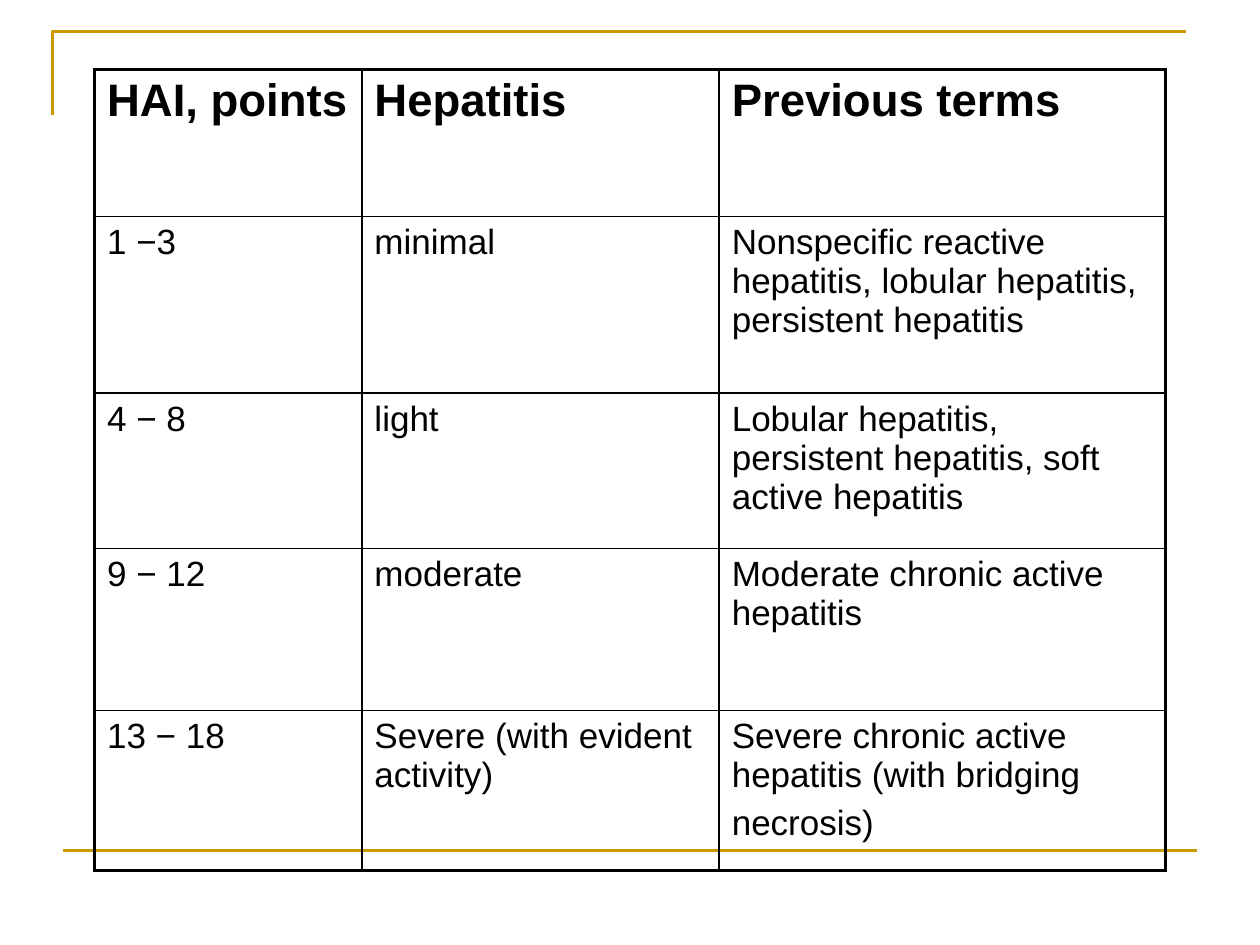
from lxml import etree
from pptx import Presentation
from pptx.dml.color import RGBColor
from pptx.enum.shapes import MSO_CONNECTOR
from pptx.oxml.ns import qn
from pptx.util import Pt

STRAIGHT = MSO_CONNECTOR.STRAIGHT
GOLD, BLACK = "CC9900", "000000"
THIN, THICK = 1, 2.25

ROWS = [
    ("HAI, points", "Hepatitis", "Previous terms"),
    ("1 −3", "minimal",
     "Nonspecific reactive hepatitis, lobular hepatitis, persistent hepatitis"),
    ("4 − 8", "light",
     "Lobular hepatitis, persistent hepatitis, soft active hepatitis"),
    ("9 − 12", "moderate", "Moderate chronic active hepatitis"),
    ("13 − 18", "Severe (with evident activity)",
     "Severe chronic active hepatitis (with bridging necrosis)"),
]
COL_WIDTHS = [152.8, 204.2, 255]
ROW_HEIGHTS = [84, 101, 88.8, 92.6, 91.6]
TABLE_LEFT, TABLE_TOP = 54, 39.6
CORNER = [(30, 66), (30, 18), (678, 18)]
RULE = [(36, 486), (684, 486)]
HEAD_FONT = {"name": "Arial", "size": Pt(26), "bold": True}
BODY_FONT = {"name": "Arial", "size": Pt(20), "bold": False}


def rgb(color):
    return RGBColor.from_string(color)


def format_font(font, values):
    for name, value in values.items():
        setattr(font, name, value)
    font.color.rgb = rgb(BLACK)


def format_line(line):
    line.color.rgb = rgb(GOLD)
    line.width = Pt(1.5)


def set_borders(cell, widths):
    """Draw the cell's sides; widths maps L, R, T and B to points."""
    tc_pr = cell._tc.get_or_add_tcPr()
    for i, (side, width) in enumerate(widths.items()):
        ln = etree.Element(qn(f"a:ln{side}"), w=str(Pt(width)))
        fill = etree.SubElement(ln, qn("a:solidFill"))
        etree.SubElement(fill, qn("a:srgbClr"), val=BLACK)
        tc_pr.insert(i, ln)


def add_frame_lines(shapes):
    builder = shapes.build_freeform(*map(Pt, CORNER[0]), scale=1.0)
    builder.add_line_segments([tuple(map(Pt, xy)) for xy in CORNER[1:]], close=False)
    corner = builder.convert_to_shape()
    corner.shadow.inherit = False
    corner.fill.background()
    format_line(corner.line)

    (x1, y1), (x2, y2) = RULE
    rule = shapes.add_connector(STRAIGHT, Pt(x1), Pt(y1), Pt(x2), Pt(y2))
    etree.SubElement(rule._element.spPr, qn("a:effectLst"))
    format_line(rule.line)


def add_hepatitis_table(shapes):
    n_rows, n_cols = len(ROWS), len(COL_WIDTHS)
    table = shapes.add_table(
        n_rows, n_cols, Pt(TABLE_LEFT), Pt(TABLE_TOP),
        Pt(sum(COL_WIDTHS)), Pt(sum(ROW_HEIGHTS))).table
    table.first_row = table.horz_banding = False
    for column, width in zip(table.columns, COL_WIDTHS):
        column.width = Pt(width)
    for row, height in zip(table.rows, ROW_HEIGHTS):
        row.height = Pt(height)

    for i, texts in enumerate(ROWS):
        for j, text in enumerate(texts):
            cell = table.cell(i, j)
            cell.fill.background()
            r = cell.text_frame.paragraphs[0].add_run()
            r.text = text
            format_font(r.font, BODY_FONT if i else HEAD_FONT)
            on_edge = {"L": j == 0, "R": j == n_cols - 1,
                       "T": i == 0, "B": i == n_rows - 1}
            set_borders(cell, {side: THICK if edge else THIN
                               for side, edge in on_edge.items()})

    # A larger closing space gives the last line its extra height.
    r = table.cell(n_rows - 1, n_cols - 1).text_frame.paragraphs[0].add_run()
    r.text = " "
    format_font(r.font, {**BODY_FONT, "size": Pt(26)})


def main():
    prs = Presentation()
    prs.slide_width, prs.slide_height = Pt(720), Pt(540)
    s = prs.slides.add_slide(prs.slide_layouts[6])
    add_frame_lines(s.shapes)
    add_hepatitis_table(s.shapes)
    prs.save("out.pptx")


if __name__ == "__main__":
    main()
